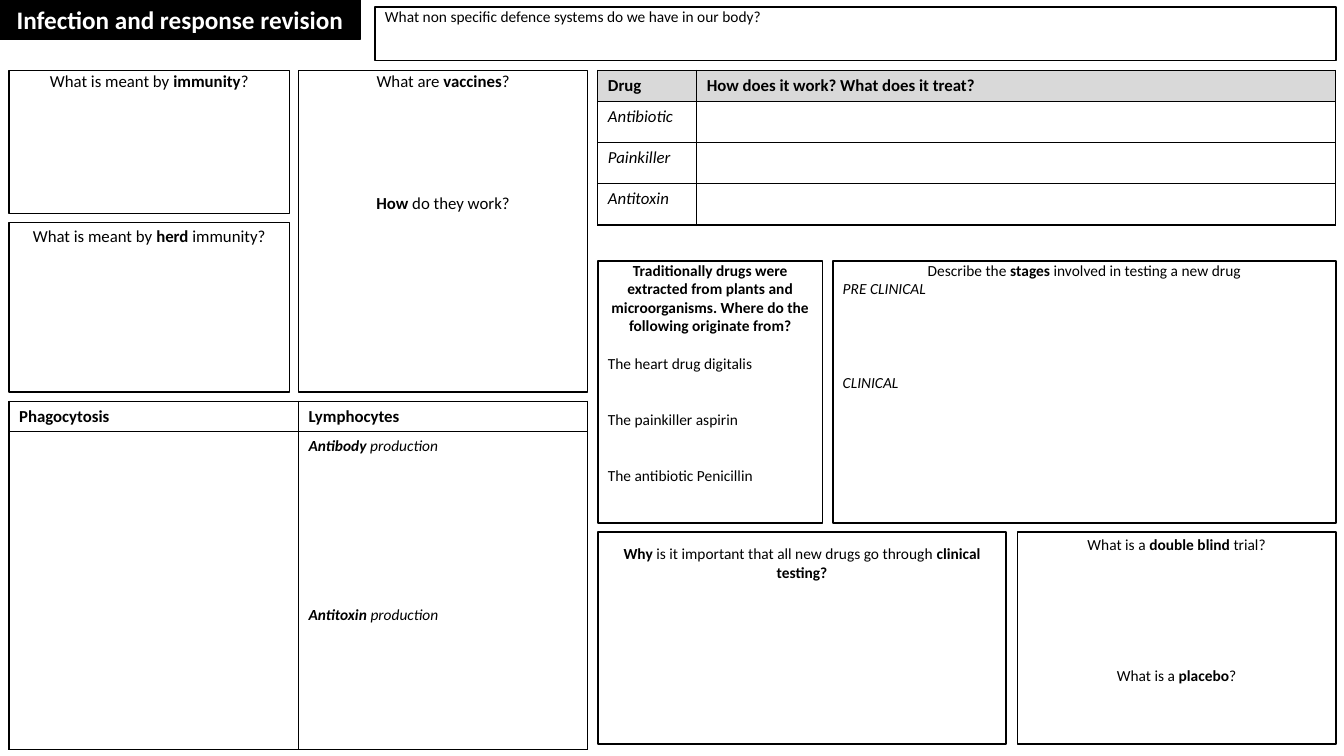
from dataclasses import dataclass
from typing import Optional

from lxml.etree import SubElement as sub_element
from pptx import Presentation
from pptx.dml.color import RGBColor
from pptx.enum.shapes import MSO_SHAPE as Shape
from pptx.enum.text import MSO_ANCHOR as Anchor, PP_ALIGN as Align
from pptx.oxml.ns import qn
from pptx.util import Inches, Pt

BLACK = RGBColor(0x00, 0x00, 0x00)
WHITE = RGBColor(0xFF, 0xFF, 0xFF)
GREY = RGBColor(0xD9, 0xD9, 0xD9)
FONT = "Calibri"
LINE_HEIGHT = 1.22  # share of the font size

# Grid: start and end of each column and row, in inches
COLUMNS = {
    "title": (0, 3.57), "question": (3.72, 13.25),
    "immunity": (0.09, 2.87), "vaccines": (2.96, 5.83), "cells": (0.09, 5.83),
    "drugs": (5.93, 13.25), "origins": (5.93, 8.16), "stages": (8.26, 13.25),
    "testing": (5.93, 9.98), "trial": (10.09, 13.25),
}
ROWS = {
    "title": (0, 0.39), "question": (0.07, 0.6),
    "upper": (0.7, 2.12), "middle": (2.21, 3.89), "tall": (0.7, 3.89),
    "drugs": (0.7, 2.23), "cells": (3.98, 7.43),
    "testing": (2.59, 5.19), "lower": (5.28, 7.38),
}


@dataclass
class Line:
    text: str  # ** switches bold on and off
    centred: bool = False
    italic: bool = False
    blank_before: int = 0  # space above, in line heights


@dataclass
class Box:
    column: str
    row: str
    lines: list[Line]
    size: int = 11
    inset: float = 0
    anchor: Anchor = Anchor.TOP
    fill: RGBColor = WHITE
    colour: RGBColor = BLACK


@dataclass
class Cell:
    lines: list[Line]
    size: int = 12
    fill: Optional[RGBColor] = None


@dataclass
class Grid:
    column: str
    row: str
    widths: list[float]
    heights: list[float]
    cells: list[list[Cell]]


def area(column: str, row: str) -> list[int]:
    """Left, top, width and height of a place in the grid."""
    (left, right), (top, bottom) = COLUMNS[column], ROWS[row]
    return [Inches(length) for length in (left, top, right - left, bottom - top)]


def write_lines(frame, lines: list[Line], size: int, colour: RGBColor) -> None:
    for index, line in enumerate(lines):
        paragraph = frame.add_paragraph() if index else frame.paragraphs[0]
        paragraph.alignment = Align.CENTER if line.centred else Align.LEFT
        paragraph.space_before = Pt(round(line.blank_before * size * LINE_HEIGHT, 2))
        for part, text in enumerate(line.text.split("**")):
            if not text:
                continue
            run = paragraph.add_run()
            run.text = text
            run.font.color.rgb = colour
            style = {"name": FONT, "size": Pt(size), "bold": part % 2 == 1, "italic": line.italic}
            for name, value in style.items():
                setattr(run.font, name, value)


def draw_box(slide, box: Box) -> None:
    shape = slide.shapes.add_shape(Shape.RECTANGLE, *area(box.column, box.row))
    shape.shadow.inherit = False
    shape.fill.solid()
    shape.fill.fore_color.rgb = box.fill
    shape.line.color.rgb = BLACK
    shape.line.width = Pt(1)
    layout = {"word_wrap": True, "vertical_anchor": box.anchor,
              "margin_top": Inches(box.inset), "margin_bottom": 0}
    for name, value in layout.items():
        setattr(shape.text_frame, name, value)
    write_lines(shape.text_frame, box.lines, box.size, box.colour)


def add_borders(cell) -> None:
    properties = cell._tc.get_or_add_tcPr()
    for side in ("lnL", "lnR", "lnT", "lnB"):
        border = sub_element(properties, qn(f"a:{side}"), w=str(Pt(1)))
        fill = sub_element(border, qn("a:solidFill"))
        sub_element(fill, qn("a:srgbClr"), val=str(BLACK))


def draw_table(slide, grid: Grid) -> None:
    frame = slide.shapes.add_table(
        len(grid.heights), len(grid.widths), *area(grid.column, grid.row))
    table = frame.table
    for column, width in zip(table.columns, grid.widths):
        column.width = Inches(width)
    for row, height in zip(table.rows, grid.heights):
        row.height = Inches(height)
    for row, contents in zip(table.rows, grid.cells):
        for cell, content in zip(row.cells, contents):
            add_borders(cell)
            if content.fill is None:
                cell.fill.background()
            else:
                cell.fill.solid()
                cell.fill.fore_color.rgb = content.fill
            write_lines(cell.text_frame, content.lines, content.size, BLACK)


BOXES = [
    Box("title", "title", [Line("**Infection and response revision**", True)],
        size=18, anchor=Anchor.MIDDLE, fill=BLACK, colour=WHITE),
    Box("question", "question",
        [Line("What non specific defence systems do we have in our body?")]),
    Box("immunity", "upper", [Line("What is meant by **immunity**?", True)], size=12),
    Box("immunity", "middle", [Line("What is meant by **herd** immunity?", True)],
        size=12, inset=0.03),
    Box("vaccines", "tall", [
        Line("What are **vaccines**?", True),
        Line("**How** do they work?", True, blank_before=5)], size=12),
    Box("origins", "testing", [
        Line("**Traditionally drugs were extracted from plants and microorganisms. "
             "Where do the following originate from?**", True),
        Line("The heart drug digitalis", blank_before=1),
        Line("The painkiller aspirin", blank_before=2),
        Line("The antibiotic Penicillin", blank_before=2)]),
    Box("stages", "testing", [
        Line("Describe the **stages** involved in testing a new drug", True),
        Line("PRE CLINICAL", italic=True),
        Line("CLINICAL", italic=True, blank_before=4)]),
    Box("testing", "lower", [
        Line("**Why** is it important that all new drugs go through **clinical testing?**",
             True)], inset=0.12),
    Box("trial", "lower", [
        Line("What is a **double blind **trial?", True),
        Line("What is a **placebo**?", True, blank_before=6)], inset=0.03),
]

DRUGS = ["Antibiotic", "Painkiller", "Antitoxin"]
TABLES = [
    Grid("cells", "cells", [2.87, 2.87], [0.3, 3.15], [
        [Cell([Line("**Phagocytosis**")]), Cell([Line("**Lymphocytes**")])],
        [Cell([]), Cell([
            Line("**Antibody** production", italic=True),
            Line("**Antitoxin** production", italic=True, blank_before=8)], size=11)]]),
    Grid("drugs", "drugs", [0.98, 6.34], [0.3] + [0.41] * len(DRUGS), [
        [Cell([Line(f"**{heading}**")], fill=GREY)
         for heading in ("Drug", "How does it work? What does it treat?")],
        *[[Cell([Line(drug, italic=True)]), Cell([])] for drug in DRUGS]]),
]


def main() -> None:
    presentation = Presentation()
    presentation.slide_width, presentation.slide_height = Inches(13.33), Inches(7.5)
    slide = presentation.slides.add_slide(presentation.slide_layouts[6])
    # Title and question boxes
    for box in BOXES:
        draw_box(slide, box)
    # Tables
    for grid in TABLES:
        draw_table(slide, grid)
    presentation.save("out.pptx")


if __name__ == "__main__":
    main()
